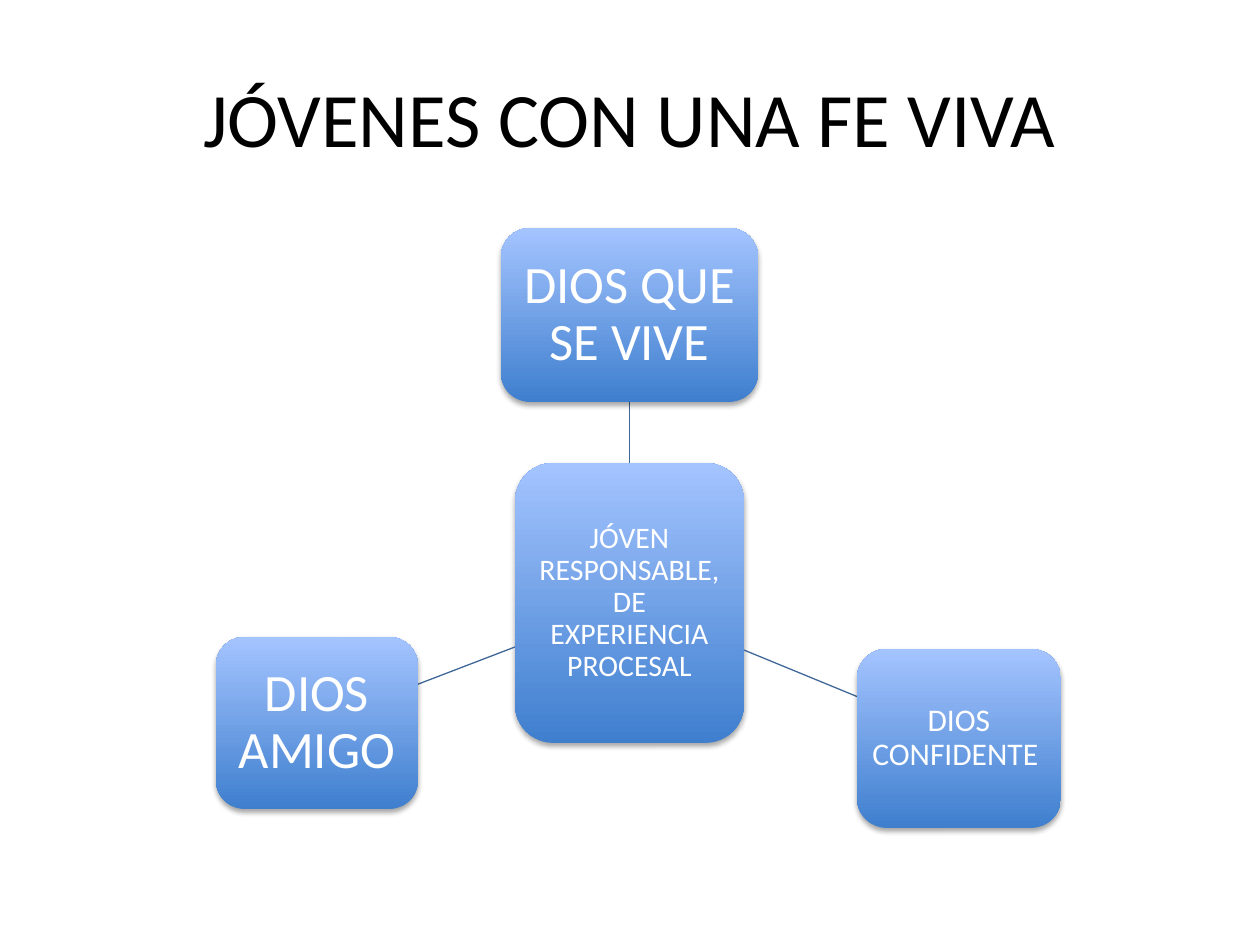
"""Build a slide with a radial diagram: one central idea joined to three satellites."""
from lxml import etree
from pptx import Presentation
from pptx.dml.color import RGBColor
from pptx.enum.shapes import MSO_CONNECTOR, MSO_SHAPE
from pptx.enum.text import MSO_ANCHOR, PP_ALIGN
from pptx.oxml.ns import qn
from pptx.util import Pt

STRAIGHT = MSO_CONNECTOR.STRAIGHT
ROUNDED = MSO_SHAPE.ROUNDED_RECTANGLE
MIDDLE = MSO_ANCHOR.MIDDLE
CENTER = PP_ALIGN.CENTER

BLACK = RGBColor(0x00, 0x00, 0x00)
WHITE = RGBColor(0xFF, 0xFF, 0xFF)
DEEP_BLUE = RGBColor(0x3F, 0x7F, 0xCE)
PALE_BLUE = RGBColor(0xA4, 0xC4, 0xFF)
LINK_BLUE = RGBColor(0x3F, 0x67, 0x97)
FONT = "Calibri"
EMU_PER_PX = 914400 / 126

TITLE = ("JÓVENES CON UNA FE VIVA", (63, 38, 1134, 157), 44)
CORE = ("JÓVEN RESPONSABLE, DE EXPERIENCIA PROCESAL", (515, 463, 229, 280), 17, 6)
SATELLITES = [
    ("DIOS QUE SE VIVE", (501, 228, 257, 174), 30, 10),
    ("DIOS CONFIDENTE ", (857, 649, 204, 179), 18, 6),
    ("DIOS AMIGO", (216, 637, 202, 172), 30, 10),
]


def px(*lengths):
    return [round(length * EMU_PER_PX) for length in lengths]


def write(shape, wording, size, color, inset, spacing):
    frame = shape.text_frame
    frame.word_wrap = True
    frame.vertical_anchor = MIDDLE
    frame.margin_left, frame.margin_top, frame.margin_right, frame.margin_bottom = px(*[inset] * 4)
    paragraph = frame.paragraphs[0]
    paragraph.alignment = CENTER
    paragraph.line_spacing = spacing
    run = paragraph.add_run()
    run.text = wording
    run.font.size = Pt(size)
    run.font.name = FONT
    run.font.color.rgb = color


def cast_shadow(shape):
    shape.shadow.inherit = False
    effects = shape._element.spPr.find(qn("a:effectLst"))
    shadow = etree.SubElement(effects, qn("a:outerShdw"), blurRad=str(Pt(3.1)),
                              dist=str(Pt(1.8)), dir="5400000", rotWithShape="0")
    tint = etree.SubElement(shadow, qn("a:srgbClr"), val=str(BLACK))
    etree.SubElement(tint, qn("a:alpha"), val="35000")


def add_idea(slide, wording, box, size, inset):
    idea = slide.shapes.add_shape(ROUNDED, *px(*box))
    idea.fill.gradient()
    idea.fill.gradient_angle = 90
    for stop, color in zip(idea.fill.gradient_stops, (DEEP_BLUE, PALE_BLUE)):
        stop.color.rgb = color
    idea.line.fill.background()
    cast_shadow(idea)
    write(idea, wording, size, WHITE, inset, 0.9)


def middle(box):
    left, top, width, height = box
    return left + width / 2, top + height / 2


def edge_toward(box, target):
    """Return where the line from the middle of box to target leaves the box."""
    x, y = middle(box)
    dx, dy = target[0] - x, target[1] - y
    share = 0.5 / max(abs(dx) / box[2], abs(dy) / box[3])
    return x + dx * share, y + dy * share


def add_link(slide, core_box, satellite_box):
    start = edge_toward(core_box, middle(satellite_box))
    end = edge_toward(satellite_box, middle(core_box))
    link = slide.shapes.add_connector(STRAIGHT, *px(*start, *end))
    link.line.color.rgb = LINK_BLUE
    link.line.width = Pt(0.75)
    etree.SubElement(link._element.spPr, qn("a:effectLst"))


def main():
    deck = Presentation()
    deck.slide_width, deck.slide_height = px(1260, 945)
    slide = deck.slides.add_slide(deck.slide_layouts[6])
    heading, heading_box, heading_size = TITLE
    write(slide.shapes.add_textbox(*px(*heading_box)), heading, heading_size, BLACK, 6, 1.0)
    add_idea(slide, *CORE)
    for satellite in SATELLITES:
        add_link(slide, CORE[1], satellite[1])
        add_idea(slide, *satellite)
    deck.save("out.pptx")


if __name__ == "__main__":
    main()
